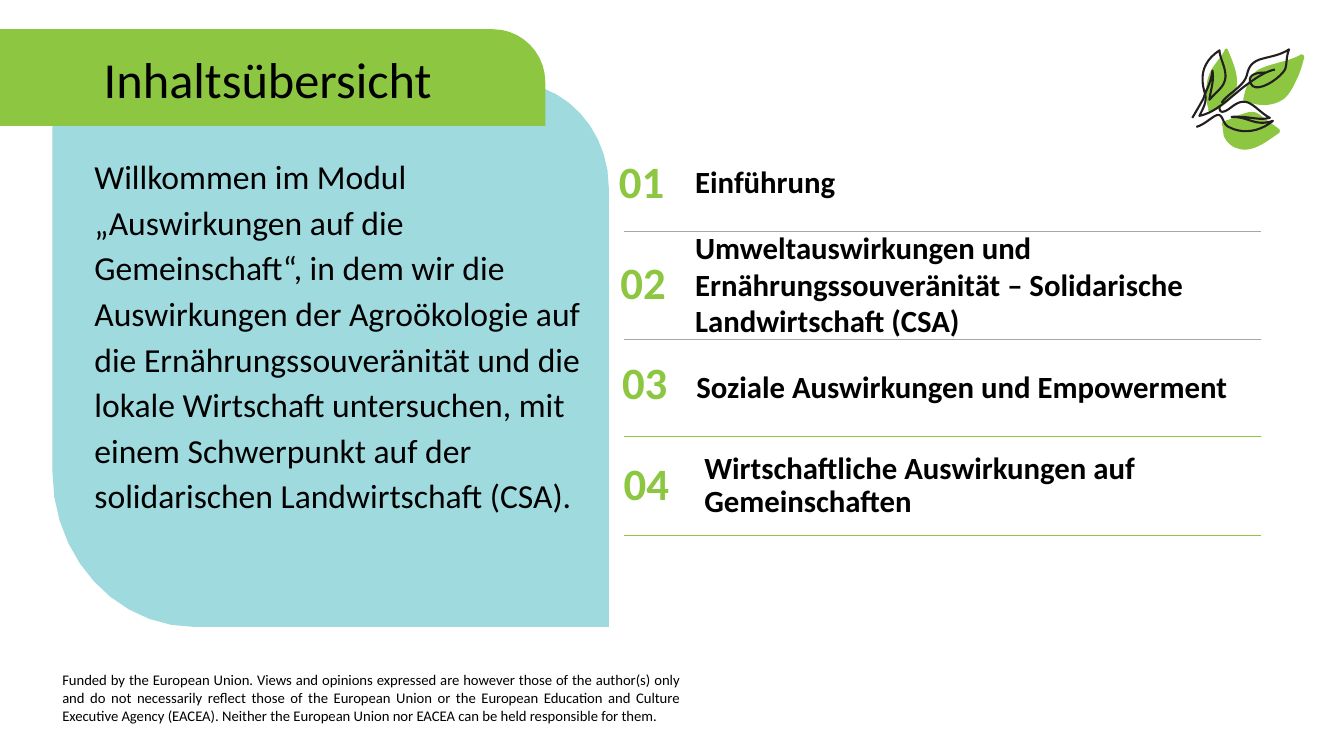
from dataclasses import dataclass

from lxml.etree import SubElement
from pptx import Presentation
from pptx.dml.color import RGBColor
from pptx.enum.shapes import MSO_CONNECTOR
from pptx.enum.text import MSO_ANCHOR as Anchor, MSO_AUTO_SIZE as AutoSize, PP_ALIGN as Align
from pptx.oxml.ns import qn
from pptx.util import Cm, Pt


@dataclass(frozen=True)
class Theme:
    font: str = "Calibri"
    green: RGBColor = RGBColor(0x8D, 0xC6, 0x41)
    aqua: RGBColor = RGBColor(0x9F, 0xDA, 0xDF)
    grey: RGBColor = RGBColor(0xA6, 0xA6, 0xA6)
    ink: RGBColor = RGBColor(0x23, 0x1F, 0x20)
    black: RGBColor = RGBColor(0, 0, 0)
    title: float = 36
    number: float = 32
    intro: float = 24
    item: float = 22
    funding: float = 10.5


THEME = Theme()
TITLE_ONLY = 5
GRID = 0.0254  # outline unit in cm
CURVE_STEPS = 10

INTRO = (
    "Willkommen im Modul „Auswirkungen auf die Gemeinschaft“, in dem wir die Auswirkungen "
    "der Agroökologie auf die Ernährungssouveränität und die lokale Wirtschaft untersuchen, "
    "mit einem Schwerpunkt auf der solidarischen Landwirtschaft (CSA)."
)
FUNDING = (
    "Funded by the European Union. Views and opinions expressed are however those of the "
    "author(s) only and do not necessarily reflect those of the European Union or the European "
    "Education and Culture Executive Agency (EACEA). Neither the European Union nor EACEA can "
    "be held responsible for them."
)

# Text, box in cm, anchor, line spacing, height of the rule below, rule colour
ITEMS = [
    ("Einführung", (17.27, 3.68, 12.4, 1.9), Anchor.MIDDLE, 0.9, 5.84, THEME.grey),
    ("Umweltauswirkungen und Ernährungssouveränität – Solidarische Landwirtschaft (CSA)",
     (17.27, 6.78, 16.5, 1.9), Anchor.BOTTOM, 0.98, 8.56, THEME.grey),
    ("Soziale Auswirkungen und Empowerment",
     (17.3, 8.84, 14.99, 1.9), Anchor.MIDDLE, 0.9, 11, THEME.green),
    ("Wirtschaftliche Auswirkungen auf Gemeinschaften",
     (17.5, 11.3, 16.26, 1.9), Anchor.MIDDLE, 0.9, 13.49, THEME.green),
]

# Outlines: a start point, then line ends (x, y) or curves (x1, y1, x2, y2, x, y)
INTRO_PANEL = [(604, 622), (193, 622), (115, 622, 52, 553, 52, 468), (52, 82), (508, 82),
               (561, 82, 604, 129, 604, 186)]
TITLE_BAND = [(0, 29), (489, 29), (518, 29, 541, 53, 541, 81), (541, 125), (0, 125)]
LEAVES = [
    [(1205, 110), (1215, 105, 1225, 97, 1227, 86), (1229, 74, 1223, 61, 1218, 49),
     (1218, 48, 1215, 48, 1215, 50), (1212, 56, 1208, 60, 1204, 66),
     (1201, 70, 1199, 75, 1198, 80), (1196, 89, 1196, 99, 1199, 108),
     (1198, 109, 1200, 112, 1202, 111)],
    [(1274, 98), (1280, 93, 1283, 86, 1286, 80), (1290, 72, 1292, 65, 1294, 57),
     (1294, 55, 1293, 54, 1291, 54), (1284, 58, 1277, 60, 1269, 62),
     (1263, 64, 1257, 65, 1251, 68), (1246, 70, 1242, 74, 1240, 79),
     (1237, 85, 1235, 91, 1234, 97), (1233, 99, 1234, 100, 1236, 100),
     (1248, 106, 1263, 106, 1274, 98)],
    [(1269, 132), (1270, 131, 1270, 129, 1269, 128), (1264, 124, 1259, 121, 1254, 117),
     (1250, 114, 1247, 111, 1242, 111), (1238, 111, 1234, 113, 1230, 114),
     (1226, 116, 1222, 117, 1219, 119), (1217, 119, 1216, 120, 1213, 121),
     (1212, 122, 1212, 124, 1213, 125), (1213, 128, 1214, 132, 1214, 134),
     (1216, 140, 1221, 145, 1227, 147), (1242, 153, 1257, 140, 1269, 132)],
]
LEAF_STROKES = [
    [(1195, 91), (1190, 73, 1195, 60, 1210, 50), (1210, 57, 1216, 66, 1216, 76),
     (1215, 86, 1210, 88, 1200, 99), (1201, 90, 1205, 80, 1203, 70),
     (1202, 82, 1195, 93, 1194, 98), (1190, 105, 1186, 112, 1183, 117)],
    [(1195, 91), (1198, 100, 1195, 105, 1190, 115), (1205, 112, 1217, 100, 1233, 87),
     (1245, 78, 1255, 71, 1265, 69)],
    [(1212, 102), (1218, 93, 1234, 86, 1237, 75), (1239, 66, 1242, 62, 1250, 59),
     (1260, 56, 1270, 55, 1279, 49), (1276, 56, 1277, 64, 1275, 69),
     (1270, 78, 1246, 94, 1241, 83), (1237, 74, 1247, 72, 1255, 72)],
    [(1187, 126), (1197, 123, 1204, 114, 1209, 114), (1214, 115, 1213, 123, 1219, 126),
     (1234, 134, 1251, 130, 1263, 120), (1245, 126, 1240, 116, 1222, 116),
     (1240, 115, 1248, 120, 1260, 117), (1250, 112, 1242, 100, 1233, 101),
     (1224, 102, 1220, 110, 1213, 111), (1210, 111, 1210, 108, 1210, 105)],
]


def trace(outline):
    """Turn an outline with Bézier curves into closely spaced points."""
    points = [outline[0]]
    for step in outline[1:]:
        if len(step) == 2:
            points.append(step)
            continue
        controls = [points[-1], step[:2], step[2:4], step[4:]]
        for i in range(1, CURVE_STEPS + 1):
            t = i / CURVE_STEPS
            weights = ((1 - t) ** 3, 3 * t * (1 - t) ** 2, 3 * t * t * (1 - t), t ** 3)
            points.append(tuple(sum(w * c[axis] for w, c in zip(weights, controls))
                                for axis in (0, 1)))
    return [(Cm(x * GRID), Cm(y * GRID)) for x, y in points]


def add_outline(slide, outline, closed):
    start, *rest = trace(outline)
    builder = slide.shapes.build_freeform(*start)
    builder.add_line_segments(rest, close=closed)
    shape = builder.convert_to_shape()
    shape.shadow.inherit = False
    return shape


def add_area(slide, outline, color):
    area = add_outline(slide, outline, closed=True)
    area.fill.solid()
    area.fill.fore_color.rgb = color
    area.line.fill.background()


def add_stroke(slide, outline):
    stroke = add_outline(slide, outline, closed=False)
    stroke.fill.background()
    stroke.line.color.rgb = THEME.ink
    stroke.line.width = Pt(1.5)


def add_rule(slide, y, color):
    rule = slide.shapes.add_connector(MSO_CONNECTOR.STRAIGHT, Cm(31.78), Cm(y), Cm(15.72), Cm(y))
    rule.line.color.rgb = color
    rule.line.width = Pt(1)
    SubElement(rule._element.spPr, qn("a:effectLst"))


def write(holder, text, size, color=THEME.black, bold=False, align=Align.LEFT,
          anchor=Anchor.MIDDLE, spacing=0.9):
    frame = holder.text_frame
    frame.word_wrap = True
    frame.auto_size = AutoSize.NONE
    frame.vertical_anchor = anchor
    paragraph = frame.paragraphs[0]
    paragraph.alignment = align
    paragraph.line_spacing = spacing
    run = paragraph.add_run()
    run.text = text
    run.font.name = THEME.font
    run.font.size = Pt(size)
    run.font.bold = bold
    run.font.color.rgb = color


def add_text(slide, box, text, size, **style):
    write(slide.shapes.add_textbox(*map(Cm, box)), text, size, **style)


def place_title(slide, text):
    """Fill the title and bring it in front of its band."""
    title = slide.shapes.title
    title.left, title.top, title.width, title.height = map(Cm, (2.36, 1.07, 14, 2.01))
    write(title, text, THEME.title)
    slide.shapes._spTree.append(title._element)


def add_item(slide, index, text, box, anchor, spacing, rule_y, rule_color):
    add_rule(slide, rule_y, rule_color)
    add_text(slide, (15.19 + 0.04 * index, 3.68 + 2.54 * index, 1.96, 1.9), f"{index + 1:02}",
             THEME.number, color=THEME.green, bold=True, align=Align.CENTER)
    add_text(slide, box, text, THEME.item, bold=True, anchor=anchor, spacing=spacing)


def main():
    deck = Presentation()
    deck.slide_width, deck.slide_height = Cm(33.87), Cm(19.05)
    slide = deck.slides.add_slide(deck.slide_layouts[TITLE_ONLY])

    add_area(slide, INTRO_PANEL, THEME.aqua)
    add_area(slide, TITLE_BAND, THEME.green)
    place_title(slide, "Inhaltsübersicht")
    add_text(slide, (2.13, 3.68, 12.8, 11.07), INTRO, THEME.intro, anchor=Anchor.TOP, spacing=1.13)
    for index, item in enumerate(ITEMS):
        add_item(slide, index, *item)
    add_text(slide, (1.32, 16.79, 16.08, 1.68), FUNDING, THEME.funding,
             align=Align.JUSTIFY, anchor=Anchor.TOP, spacing=1.0)

    for leaf in LEAVES:
        add_area(slide, leaf, THEME.green)
    for stroke in LEAF_STROKES:
        add_stroke(slide, stroke)
    deck.save("out.pptx")


if __name__ == "__main__":
    main()
